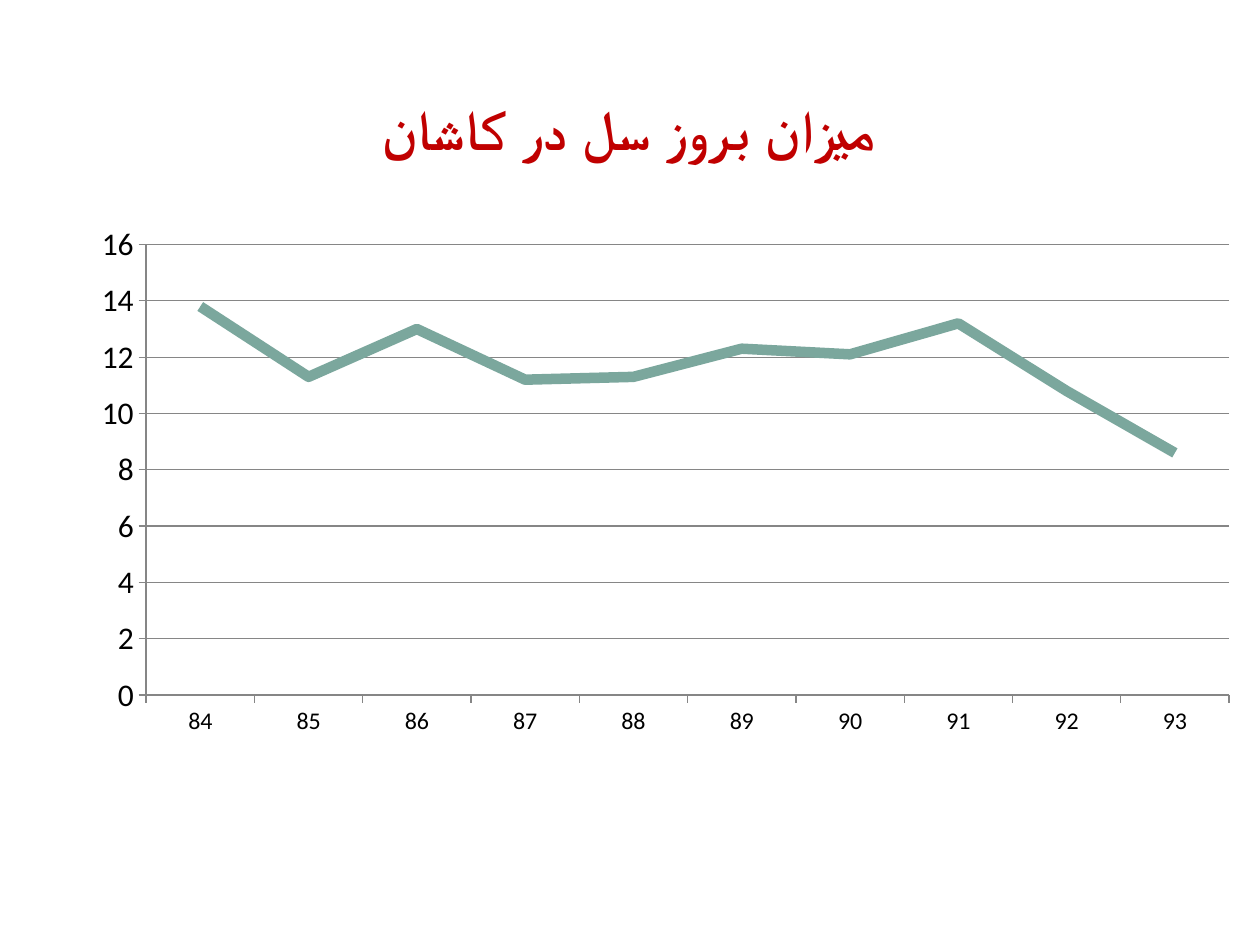
from lxml import etree
from pptx import Presentation
from pptx.chart.data import CategoryChartData
from pptx.dml.color import RGBColor
from pptx.enum import chart as ch, text as tx
from pptx.oxml import ns
from pptx.util import Pt

RED = RGBColor(0xC0, 0x00, 0x00)
TEAL = RGBColor(0x7B, 0xA7, 0x9D)
GRAY = RGBColor(0x86, 0x86, 0x86)
BLACK = RGBColor(0, 0, 0)
FACE = "Calibri"
YEARS = [str(year) for year in range(84, 94)]
RATES = [13.8, 11.3, 13, 11.2, 11.3, 12.3, 12.1, 13.2, 10.8, 8.6]


def style(font, size, color=BLACK, bold=False):
    font.name = FACE
    font.size = Pt(size)
    font.bold = bold
    font.color.rgb = color


def write(frame, words, align=tx.PP_ALIGN.CENTER, **form):
    para = frame.paragraphs[0]
    para.alignment = align
    para._p.get_or_add_pPr().set("rtl", "1")
    run = para.add_run()
    run.text = words
    style(run.font, **form)


def add_title(slide, left, top, width, height):
    title = slide.shapes.title
    title.left, title.top = Pt(left), Pt(top)
    title.width, title.height = Pt(width), Pt(height)
    frame = title.text_frame
    frame.word_wrap = True
    frame.auto_size = tx.MSO_AUTO_SIZE.SHAPE_TO_FIT_TEXT
    frame.vertical_anchor = tx.MSO_ANCHOR.TOP
    write(frame, "میزان بروز سل در کاشان", size=32, color=RED, bold=True)


def set_plot(chart, **box):
    area = chart._chartSpace.chart.plotArea
    for old in area.findall(ns.qn("c:layout")):
        area.remove(old)
    layout = etree.Element(ns.qn("c:layout"))
    manual = etree.SubElement(layout, ns.qn("c:manualLayout"))
    parts = {"layoutTarget": "inner", "xMode": "edge", "yMode": "edge", **box}
    for name, value in parts.items():
        etree.SubElement(manual, ns.qn("c:" + name)).set("val", str(value))
    area.insert(0, layout)


def add_rates(slide, left, top, width, height):
    data = CategoryChartData()
    data.categories = YEARS
    data.add_series("Series 1", RATES)
    chart = slide.shapes.add_chart(
        ch.XL_CHART_TYPE.LINE_STACKED,
        Pt(left), Pt(top), Pt(width), Pt(height), data).chart
    chart.has_title = False
    chart.has_legend = False
    style(chart.font, 18)
    set_plot(chart, x=0.09, y=0.08, w=0.91, h=0.75)

    plot = chart.plots[0]
    plot.vary_by_categories = False
    line = plot.series[0]
    line.smooth = False
    line.marker.style = ch.XL_MARKER_STYLE.NONE
    line.format.line.color.rgb = TEAL
    line.format.line.width = Pt(6)

    for axis, size in ((chart.category_axis, 13.7), (chart.value_axis, 18)):
        style(axis.tick_labels.font, size)
        axis.major_tick_mark = ch.XL_TICK_MARK.OUTSIDE
        axis.format.line.color.rgb = GRAY
    scale = chart.value_axis
    scale.minimum_scale, scale.maximum_scale = 0, 16
    scale.major_unit = 2
    scale.has_major_gridlines = True
    scale.major_gridlines.format.line.color.rgb = GRAY


def main():
    deck = Presentation()
    deck.slide_width, deck.slide_height = Pt(720), Pt(540)
    slide = deck.slides.add_slide(deck.slide_layouts[5])
    add_rates(slide, 22.3, 112.3, 680.4, 343.4)
    add_title(slide, 168.5, 50.4, 382.3, 46)
    deck.save("out.pptx")


if __name__ == "__main__":
    main()
